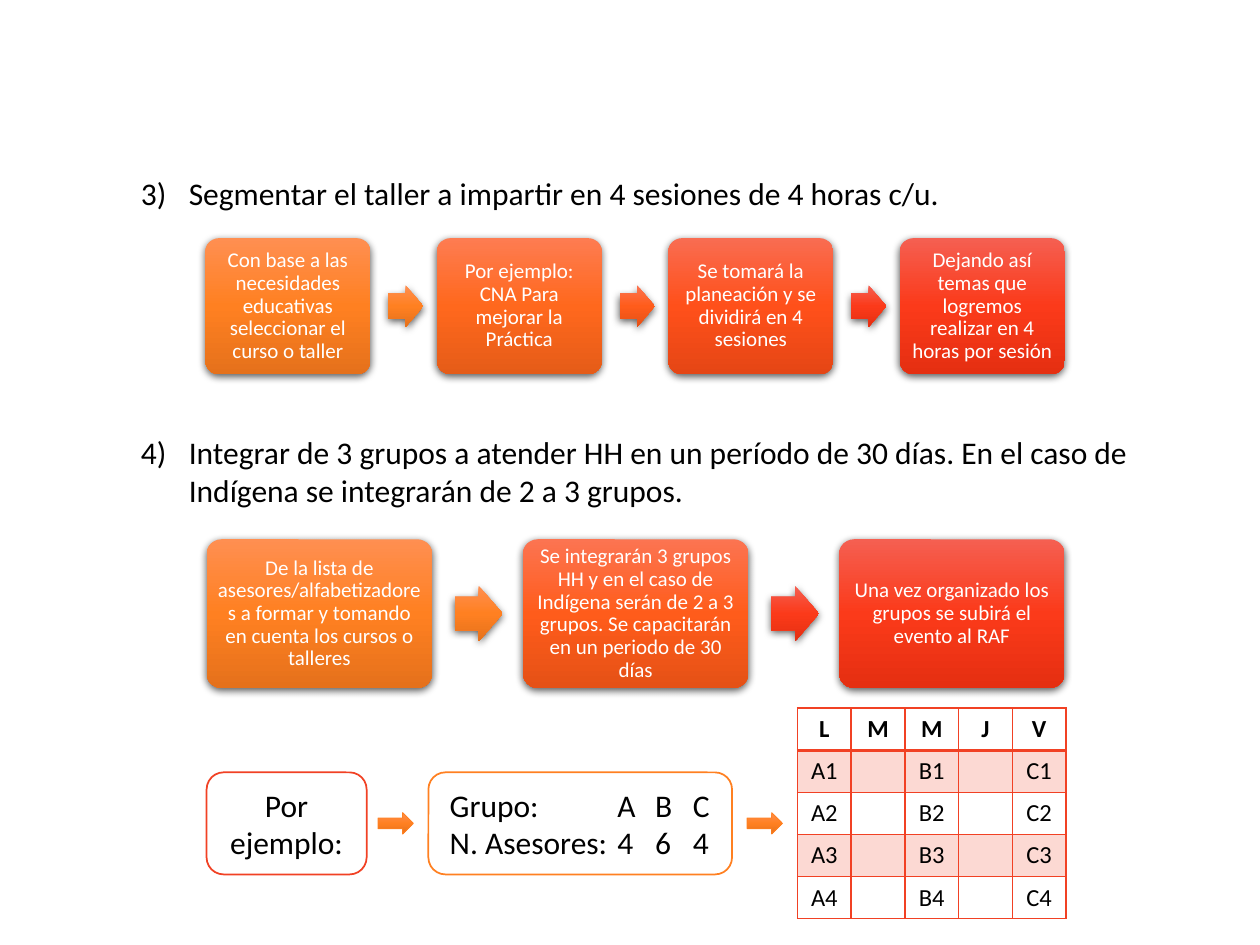
"""Build the slide on splitting a workshop into sessions and forming groups."""
from dataclasses import dataclass

from lxml.etree import SubElement
from pptx import Presentation
from pptx.dml.color import RGBColor
from pptx.enum.shapes import MSO_SHAPE
from pptx.enum.text import MSO_ANCHOR, PP_ALIGN
from pptx.oxml.ns import qn
from pptx.util import Inches, Pt

ROUNDED = MSO_SHAPE.ROUNDED_RECTANGLE
ARROW = MSO_SHAPE.RIGHT_ARROW
MIDDLE = MSO_ANCHOR.MIDDLE
LEFT, CENTER = PP_ALIGN.LEFT, PP_ALIGN.CENTER

FONT = "Calibri"
BLACK = RGBColor(0x00, 0x00, 0x00)
WHITE = RGBColor(0xFF, 0xFF, 0xFF)
ACCENT_RED = RGBColor(0xF1, 0x41, 0x24)
ACCENT_ORANGE = RGBColor(0xFF, 0x80, 0x21)
ORANGE = (RGBColor(0xFF, 0x8F, 0x51), ACCENT_ORANGE, RGBColor(0xE5, 0x71, 0x1B))
TANGERINE = (RGBColor(0xFE, 0x7C, 0x51), RGBColor(0xFF, 0x68, 0x1D), RGBColor(0xE5, 0x5C, 0x18))
CORAL = (RGBColor(0xFC, 0x74, 0x51), RGBColor(0xFF, 0x5C, 0x1B), RGBColor(0xE5, 0x51, 0x16))
VERMILION = (RGBColor(0xF9, 0x6C, 0x51), RGBColor(0xFF, 0x50, 0x1A), RGBColor(0xE5, 0x46, 0x15))
RED = (RGBColor(0xF5, 0x5F, 0x51), RGBColor(0xFB, 0x3A, 0x1A), RGBColor(0xE5, 0x2F, 0x11))

SCHEDULE = (
    ("L", "M", "M", "J", "V"),
    *((f"A{number}", "", f"B{number}", "", f"C{number}") for number in range(1, 5)),
)


@dataclass(frozen=True)
class Step:
    text: str
    box_colors: tuple
    arrow_colors: tuple | None = None


@dataclass(frozen=True)
class Flow:
    left: float
    top: float
    pitch: float
    box_width: float
    box_height: float
    arrow_offset: float
    arrow_width: float
    arrow_height: float
    steps: tuple[Step, ...]


SESSIONS = Flow(1.63, 1.89, 1.837, 1.31, 1.08, 1.45, 0.28, 0.33, (
    Step("Con base a las necesidades educativas seleccionar el curso o taller", ORANGE, ORANGE),
    Step("Por ejemplo: CNA Para mejorar la Práctica", TANGERINE, CORAL),
    Step("Se tomará la planeación y se dividirá en 4 sesiones", VERMILION, RED),
    Step("Dejando así temas que logremos realizar en 4 horas por sesión", RED),
))
GROUPS = Flow(1.64, 4.28, 2.51, 1.79, 1.18, 1.97, 0.38, 0.44, (
    Step("De la lista de asesores/alfabetizadores a formar y tomando en cuenta "
         "los cursos o talleres", ORANGE, ORANGE),
    Step("Se integrarán 3 grupos HH y en el caso de Indígena serán de 2 a 3 grupos. "
         "Se capacitarán en un periodo de 30 días", CORAL, RED),
    Step("Una vez organizado los grupos se subirá el evento al RAF", RED),
))


def write(para, text: str, *, size: float, color=BLACK, bold=False, align=LEFT,
          spacing=None, number=None, tabs=()) -> None:
    para.alignment = align
    if spacing:
        para.line_spacing = spacing
    properties = para._p.get_or_add_pPr()
    if number:
        properties.set("marL", str(Inches(0.38)))
        properties.set("indent", str(Inches(-0.38)))
        SubElement(properties, qn("a:buFont"), typeface="+mj-lt")
        SubElement(properties, qn("a:buAutoNum"), type="arabicParenR", startAt=str(number))
    if tabs:
        tab_list = SubElement(properties, qn("a:tabLst"))
        for position in tabs:
            SubElement(tab_list, qn("a:tab"), pos=str(Inches(position)), algn="l")
    if not text:
        SubElement(para._p, qn("a:endParaRPr"), sz=str(int(size * 100)))
        return
    span = para.add_run()
    span.text = text
    span.font.name = FONT
    span.font.size = Pt(size)
    span.font.bold = bold
    span.font.color.rgb = color


def add_heading(page, top: float, height: float, number: int, text: str) -> None:
    box = page.shapes.add_textbox(Inches(1.02), Inches(top), Inches(8.05), Inches(height))
    box.text_frame.word_wrap = True
    write(box.text_frame.paragraphs[0], text, size=18, number=number)


def add_gradient_shape(page, kind, left: float, top: float, width: float, height: float,
                       colors: tuple, adjustments=(), shadow=True):
    shape = page.shapes.add_shape(kind, Inches(left), Inches(top), Inches(width), Inches(height))
    for index, value in enumerate(adjustments):
        shape.adjustments[index] = value
    shape.fill.gradient()
    shape.fill.gradient_angle = 270
    properties = shape._element.spPr
    stops = properties.find(".//" + qn("a:gsLst"))
    stops.clear()
    for position, color in zip((0, 50000, 100000), colors):
        stop = SubElement(stops, qn("a:gs"), pos=str(position))
        SubElement(stop, qn("a:srgbClr"), val=str(color))
    shape.line.fill.background()
    shape.shadow.inherit = False
    if shadow:
        effects = properties.find(qn("a:effectLst"))
        outer = SubElement(effects, qn("a:outerShdw"), blurRad=str(Pt(4.5)), dist=str(Pt(1.5)),
                           dir="5400000", rotWithShape="0")
        tint = SubElement(outer, qn("a:srgbClr"), val=str(BLACK))
        SubElement(tint, qn("a:alpha"), val="63000")
    return shape


def set_margins(frame, size: float) -> None:
    frame.margin_left = frame.margin_right = Inches(size)
    frame.margin_top = frame.margin_bottom = Inches(size)


def add_flow(page, flow: Flow) -> None:
    arrow_top = flow.top + (flow.box_height - flow.arrow_height) / 2
    for index, step in enumerate(flow.steps):
        left = flow.left + index * flow.pitch
        box = add_gradient_shape(page, ROUNDED, left, flow.top, flow.box_width,
                                 flow.box_height, step.box_colors, (0.1,))
        frame = box.text_frame
        frame.word_wrap = True
        frame.vertical_anchor = MIDDLE
        set_margins(frame, 0.05)
        write(frame.paragraphs[0], step.text, size=12, color=WHITE, align=CENTER, spacing=0.9)
        if step.arrow_colors:
            add_gradient_shape(page, ARROW, left + flow.arrow_offset, arrow_top, flow.arrow_width,
                               flow.arrow_height, step.arrow_colors, (0.6, 0.5))


def add_outlined_box(page, left: float, width: float, color: RGBColor,
                     lines: tuple[str, ...], align=CENTER, tabs=()) -> None:
    box = page.shapes.add_shape(ROUNDED, Inches(left), Inches(6.13), Inches(width), Inches(0.81))
    box.shadow.inherit = False
    box.fill.solid()
    box.fill.fore_color.rgb = WHITE
    box.line.color.rgb = color
    box.line.width = Pt(1)
    frame = box.text_frame
    frame.word_wrap = True
    frame.vertical_anchor = MIDDLE
    if tabs:
        frame.margin_left = Inches(0.13)
        frame.margin_right = Inches(0.05)
    for index, line in enumerate(lines):
        para = frame.add_paragraph() if index else frame.paragraphs[0]
        write(para, line, size=18, align=align, tabs=tabs)


def add_border(cell, side: str, width: float) -> None:
    line = SubElement(cell._tc.get_or_add_tcPr(), qn(f"a:{side}"), w=str(Pt(width)))
    fill = SubElement(line, qn("a:solidFill"))
    SubElement(fill, qn("a:srgbClr"), val=str(ACCENT_RED))


def add_schedule(page) -> None:
    frame = page.shapes.add_table(len(SCHEDULE), len(SCHEDULE[0]), Inches(6.33), Inches(5.62),
                                  Inches(2.13), Inches(1.67))
    table = frame.table
    table.first_row = table.horz_banding = False
    for row, labels in enumerate(SCHEDULE):
        for column, label in enumerate(labels):
            cell = table.cell(row, column)
            write(cell.text_frame.paragraphs[0], label, size=14, bold=row == 0, align=CENTER)
            for side in ("lnL", "lnR", "lnT", "lnB"):
                below_header = (row, side) in ((0, "lnB"), (1, "lnT"))
                add_border(cell, side, 2 if below_header else 1)
            if row % 2:
                cell.fill.solid()
                cell.fill.fore_color.rgb = ACCENT_RED
                tint = cell._tc.tcPr.find(qn("a:solidFill"))[0]
                SubElement(tint, qn("a:alpha"), val="20000")
            else:
                cell.fill.background()


def main() -> None:
    deck = Presentation()
    deck.slide_width, deck.slide_height = Inches(10), Inches(7.5)
    page = deck.slides.add_slide(deck.slide_layouts[6])
    add_heading(page, 1.33, 0.4, 3, "Segmentar el taller a impartir en 4 sesiones de 4 horas c/u.")
    add_flow(page, SESSIONS)
    add_heading(page, 3.39, 0.71, 4, "Integrar de 3 grupos a atender HH en un período de 30 días. "
                "En el caso de Indígena se integrarán de 2 a 3 grupos.")
    add_flow(page, GROUPS)
    add_outlined_box(page, 1.64, 1.27, ACCENT_RED, ("Por ejemplo:",))
    add_outlined_box(page, 3.4, 2.41, ACCENT_ORANGE,
                     ("Grupo:\tA\tB\tC", "N. Asesores:\t4\t6\t4"), LEFT, (1.33, 1.63, 1.93))
    add_schedule(page)
    for left in (3, 5.93):
        arrow = add_gradient_shape(page, ARROW, left, 6.45, 0.28, 0.17, ORANGE, shadow=False)
        arrow.line.color.rgb = ACCENT_ORANGE
        arrow.line.width = Pt(0.5)
    deck.save("out.pptx")


if __name__ == "__main__":
    main()
